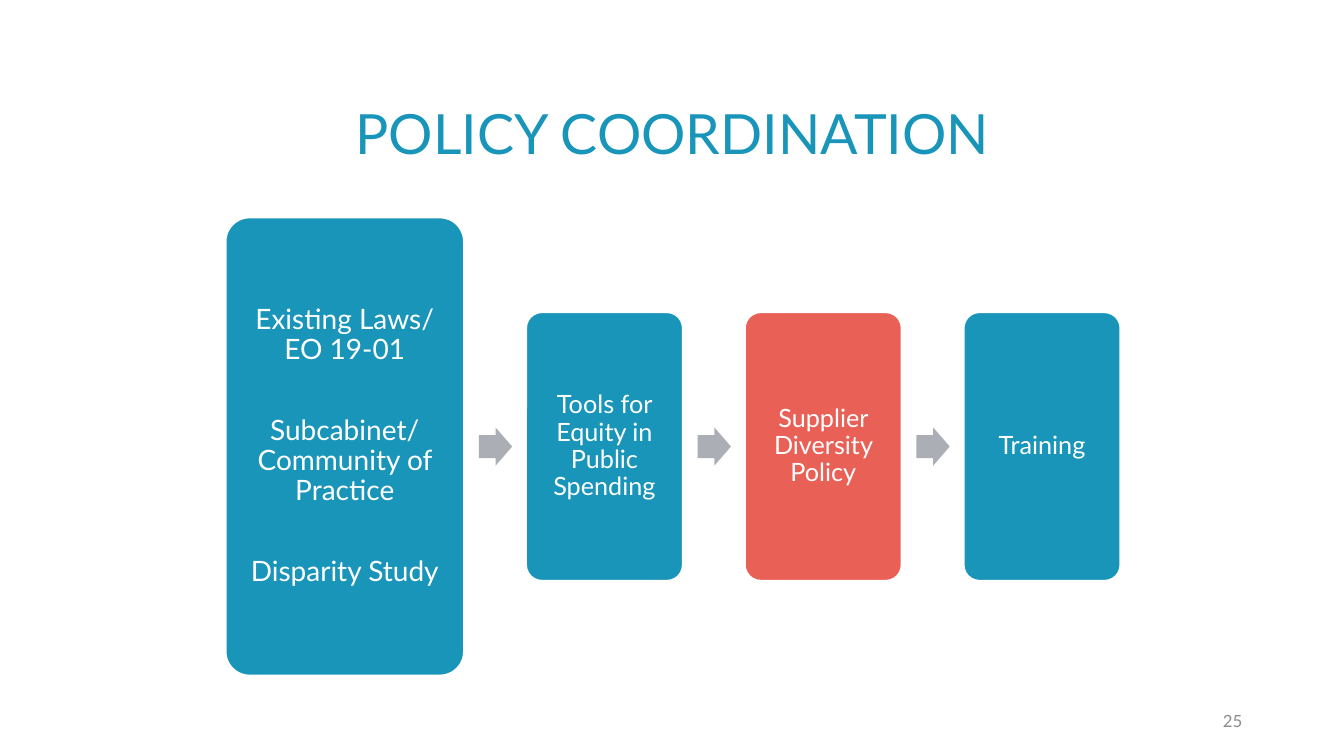
from pptx import Presentation
from pptx.dml.color import RGBColor
from pptx.enum.shapes import MSO_SHAPE
from pptx.enum.text import MSO_ANCHOR, PP_ALIGN
from pptx.util import Inches, Pt

ROUNDED = MSO_SHAPE.ROUNDED_RECTANGLE
RIGHT_ARROW = MSO_SHAPE.RIGHT_ARROW
MIDDLE = MSO_ANCHOR.MIDDLE
CENTER = PP_ALIGN.CENTER
RIGHT = PP_ALIGN.RIGHT

FONT = "Lato"
BLUE, RED, ARROW_GRAY = "1995BA", "E96057", "ACAEB6"
WHITE, NUMBER_GRAY = "FFFFFF", "8C8C8C"

CENTER_Y = 4.43
STEP_PITCH = 2.17
FOUNDATIONS = [
    "Existing Laws/ EO 19-01",
    "Subcabinet/ Community of Practice",
    "Disparity Study",
]
STEPS = [
    ("Tools for Equity in Public Spending", BLUE),
    ("Supplier Diversity Policy", RED),
    ("Training", BLUE),
]


def color(value):
    """Turn a hex string into a colour."""
    return RGBColor.from_string(value)


def write(shape, texts, size, text_color, align=CENTER, spacing=1.0, gap=0):
    """Write one paragraph per text, vertically centred."""
    frame = shape.text_frame
    frame.word_wrap = True
    frame.vertical_anchor = MIDDLE
    for index, text in enumerate(texts):
        paragraph = frame.paragraphs[0] if index == 0 else frame.add_paragraph()
        paragraph.alignment = align
        paragraph.line_spacing = spacing
        paragraph.space_before = Pt(gap if index else 0)
        run = paragraph.add_run()
        run.text = text
        run.font.name = FONT
        run.font.size = Pt(size)
        run.font.color.rgb = color(text_color)


def add_label(slide, left, top, width, height, text, size, text_color, align):
    """Add a text box with a single line."""
    box = slide.shapes.add_textbox(
        Inches(left), Inches(top), Inches(width), Inches(height))
    write(box, [text], size, text_color, align)


def add_centered_shape(slide, kind, left, width, height, fill):
    """Add a filled shape centred on the axis of the process."""
    shape = slide.shapes.add_shape(
        kind, Inches(left), Inches(CENTER_Y - height / 2),
        Inches(width), Inches(height))
    shape.shadow.inherit = False
    shape.fill.solid()
    shape.fill.fore_color.rgb = color(fill)
    return shape


def add_card(slide, left, width, height, fill, texts, size, inset):
    """Add a rounded card with its text."""
    card = add_centered_shape(slide, ROUNDED, left, width, height, fill)
    card.adjustments[0] = 0.1
    card.line.color.rgb = color(WHITE)
    card.line.width = Pt(1)
    frame = card.text_frame
    frame.margin_left = frame.margin_right = Inches(inset)
    frame.margin_top = frame.margin_bottom = Inches(inset)
    write(card, texts, size, WHITE, spacing=0.9, gap=36)


def add_arrow(slide, left):
    """Add a block arrow that leads to the next card."""
    arrow = add_centered_shape(slide, RIGHT_ARROW, left, 0.33, 0.38, ARROW_GRAY)
    arrow.adjustments[0] = 0.6
    arrow.adjustments[1] = 0.5
    arrow.line.fill.background()


def main():
    """Build the policy coordination slide."""
    presentation = Presentation()
    presentation.slide_width = Inches(13.33)
    presentation.slide_height = Inches(7.5)
    slide = presentation.slides.add_slide(presentation.slide_layouts[6])

    add_label(slide, 1.34, 0.91, 10.66, 0.8,
              "POLICY COORDINATION", 39.6, BLUE, CENTER)
    add_card(slide, 2.24, 2.36, 4.54, BLUE, FOUNDATIONS, 20, 0.08)
    for index, (text, fill) in enumerate(STEPS):
        offset = index * STEP_PITCH
        add_arrow(slide, 4.75 + offset)
        add_card(slide, 5.22 + offset, 1.55, 2.66, fill, [text], 18, 0.07)
    add_label(slide, 9.42, 6.95, 3, 0.4, "25", 12, NUMBER_GRAY, RIGHT)

    presentation.save("out.pptx")


if __name__ == "__main__":
    main()
